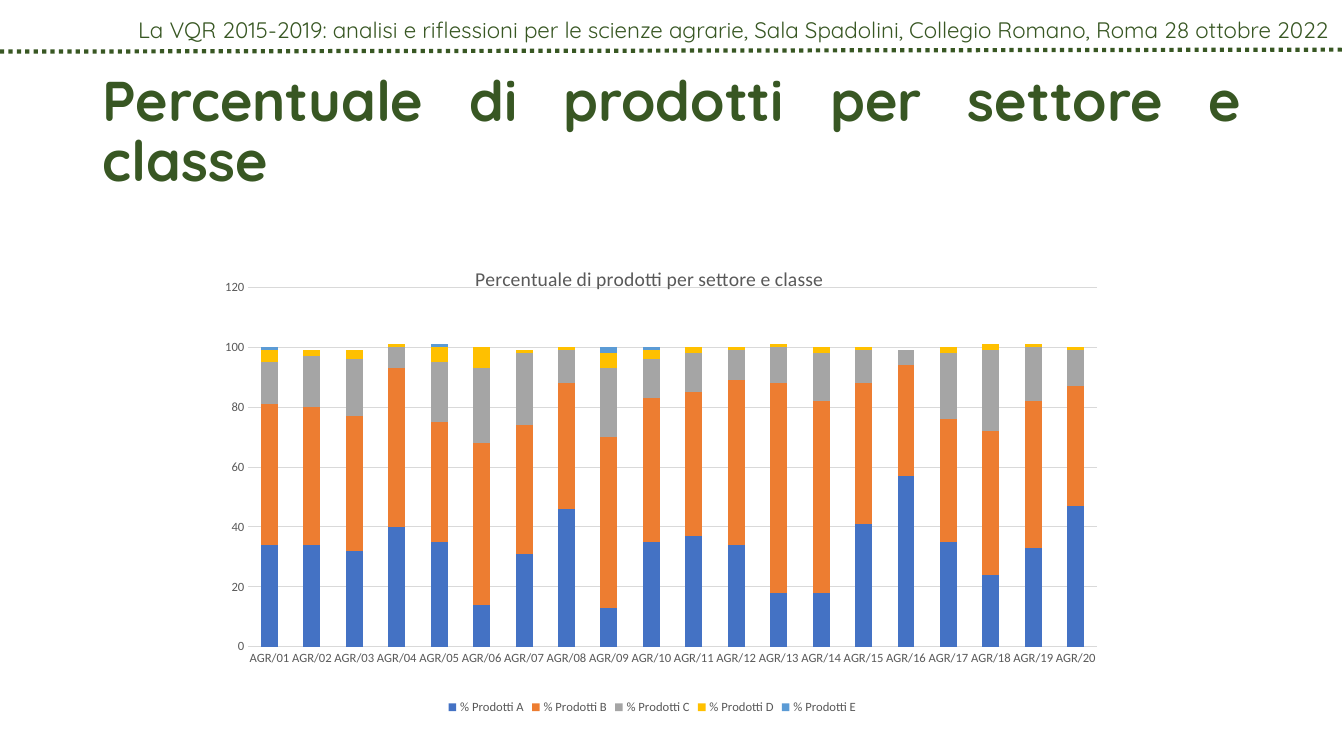
from dataclasses import dataclass

from lxml import etree
from pptx import Presentation
from pptx.chart.data import CategoryChartData
from pptx.dml.color import RGBColor
from pptx.enum.chart import XL_CHART_TYPE as CT, XL_LEGEND_POSITION as LP, XL_TICK_MARK as TM
from pptx.enum.dml import MSO_LINE
from pptx.enum.shapes import MSO_CONNECTOR as MC
from pptx.enum.text import MSO_ANCHOR as MA, MSO_AUTO_SIZE as AS, PP_ALIGN as PA
from pptx.oxml.ns import qn
from pptx.util import Cm, Pt


@dataclass(frozen=True)
class Theme:
    green: str = "385723"
    gray: str = "595959"
    grid: str = "D9D9D9"
    series: tuple = ("4472C4", "ED7D31", "A5A5A5", "FFC000", "5B9BD5")
    text_font: str = "Quicksand"
    chart_font: str = "Calibri"
    title: int = 40
    header: int = 16
    chart_title: int = 14
    label: int = 9


TH = Theme()
WIDTH, HEIGHT = 33.87, 19.05
HEADING = "Percentuale di prodotti per settore e classe"
EVENT = ("La VQR 2015-2019: analisi e riflessioni per le scienze agrarie, "
         "Sala Spadolini, Collegio Romano, Roma 28 ottobre 2022")
PRODUCTS = {
    "A": (34, 34, 32, 40, 35, 14, 31, 46, 13, 35, 37, 34, 18, 18, 41, 57, 35, 24, 33, 47),
    "B": (47, 46, 45, 53, 40, 54, 43, 42, 57, 48, 48, 55, 70, 64, 47, 37, 41, 48, 49, 40),
    "C": (14, 17, 19, 7, 20, 25, 24, 11, 23, 13, 13, 10, 12, 16, 11, 5, 22, 27, 18, 12),
    "D": (4, 2, 3, 1, 5, 7, 1, 1, 5, 3, 2, 1, 1, 2, 1, 0, 2, 2, 1, 1),
    "E": (1, 0, 0, 0, 1, 0, 0, 0, 2, 1, 0, 0, 0, 0, 0, 0, 0, 0, 0, 0),
}


def rgb(color):
    return RGBColor.from_string(color)


def style_font(font, size, color, name, bold=False):
    font.size, font.name, font.bold = Pt(size), name, bold
    font.color.rgb = rgb(color)


def write(tf, text, *, size, color, font, bold=False, align=PA.LEFT, spacing=None):
    p = tf.paragraphs[0]
    p.alignment = align
    if spacing:
        p.line_spacing = spacing
    r = p.add_run()
    r.text = text
    style_font(r.font, size, color, font, bold)


def set_layout(parent, index, **values):
    for old in parent.findall(qn("c:layout")):
        parent.remove(old)
    layout = etree.Element(qn("c:layout"))
    manual = etree.SubElement(layout, qn("c:manualLayout"))
    for key, value in values.items():
        etree.SubElement(manual, qn(f"c:{key}")).set("val", str(value))
    parent.insert(index, layout)


def add_header(s, x, y, w, h):
    tb = s.shapes.add_textbox(Cm(x - 0.13), Cm(y), Cm(w), Cm(h))
    tb.text_frame.word_wrap = True
    write(tb.text_frame, EVENT, size=TH.header, color=TH.green,
          font=TH.text_font, align=PA.RIGHT)
    rule = s.shapes.add_connector(MC.STRAIGHT, Cm(x), Cm(y + h + 0.08), Cm(x + w), Cm(y + h + 0.03))
    rule.line.color.rgb = rgb(TH.green)
    rule.line.width = Pt(3)
    rule.line.dash_style = MSO_LINE.ROUND_DOT
    etree.SubElement(rule._element.spPr, qn("a:effectLst"))


def add_title(s, x, y, w, h):
    sp = s.shapes.title
    sp.left, sp.top, sp.width, sp.height = Cm(x), Cm(y), Cm(w), Cm(h)
    tf = sp.text_frame
    tf.word_wrap, tf.auto_size, tf.vertical_anchor = True, AS.NONE, MA.MIDDLE
    write(tf, HEADING, size=TH.title, color=TH.green, font=TH.text_font,
          bold=True, align=PA.JUSTIFY, spacing=0.9)


def style_axes(chart):
    for axis in (chart.category_axis, chart.value_axis):
        axis.major_tick_mark = axis.minor_tick_mark = TM.NONE
        style_font(axis.tick_labels.font, TH.label, TH.gray, TH.chart_font)
    cat, val = chart.category_axis, chart.value_axis
    cat.format.line.color.rgb = rgb(TH.grid)
    cat.format.line.width = Pt(0.75)
    cat._element.find(qn("c:txPr")).find(qn("a:bodyPr")).set("rot", "-60000000")
    val.minimum_scale, val.maximum_scale, val.major_unit = 0, 120, 20
    val.format.line.fill.background()
    val.major_gridlines.format.line.color.rgb = rgb(TH.grid)
    val.major_gridlines.format.line.width = Pt(0.75)


def add_products_chart(s, x, y, w, h):
    data = CategoryChartData()
    data.categories = [f"AGR/{n:02d}" for n in range(1, 21)]
    for grade, values in PRODUCTS.items():
        data.add_series(f"% Prodotti {grade}", values)
    chart = s.shapes.add_chart(CT.COLUMN_STACKED, Cm(x), Cm(y), Cm(w), Cm(h), data).chart
    style_font(chart.font, TH.label, TH.gray, TH.chart_font)

    write(chart.chart_title.text_frame, HEADING, size=TH.chart_title,
          color=TH.gray, font=TH.chart_font, align=PA.CENTER)
    chart.chart_title.include_in_layout = False
    set_layout(chart.chart_title._element, 1, xMode="edge", yMode="edge", x=0.3, y=0.04)
    plot_area = chart._chartSpace.chart.plotArea
    set_layout(plot_area, 0, layoutTarget="inner", xMode="edge", yMode="edge",
               x=0.053, y=0.094, w=0.939, h=0.755)

    plot = chart.plots[0]
    plot.gap_width, plot.overlap, plot.vary_by_categories = 150, 100, False
    for series, color in zip(plot.series, TH.series):
        series.format.fill.solid()
        series.format.fill.fore_color.rgb = rgb(color)
    style_axes(chart)
    chart.has_legend = True
    chart.legend.position = LP.BOTTOM
    chart.legend.include_in_layout = False
    style_font(chart.legend.font, TH.label, TH.gray, TH.chart_font)


def main():
    prs = Presentation()
    prs.slide_width, prs.slide_height = Cm(WIDTH), Cm(HEIGHT)
    s = prs.slides.add_slide(prs.slide_layouts[5])
    add_header(s, 0, 0.28, WIDTH, 0.94)
    add_title(s, 2.33, 1.52, 29.21, 3.68)
    add_products_chart(s, 5.05, 6.12, 22.78, 11.99)
    prs.save("out.pptx")


if __name__ == "__main__":
    main()
